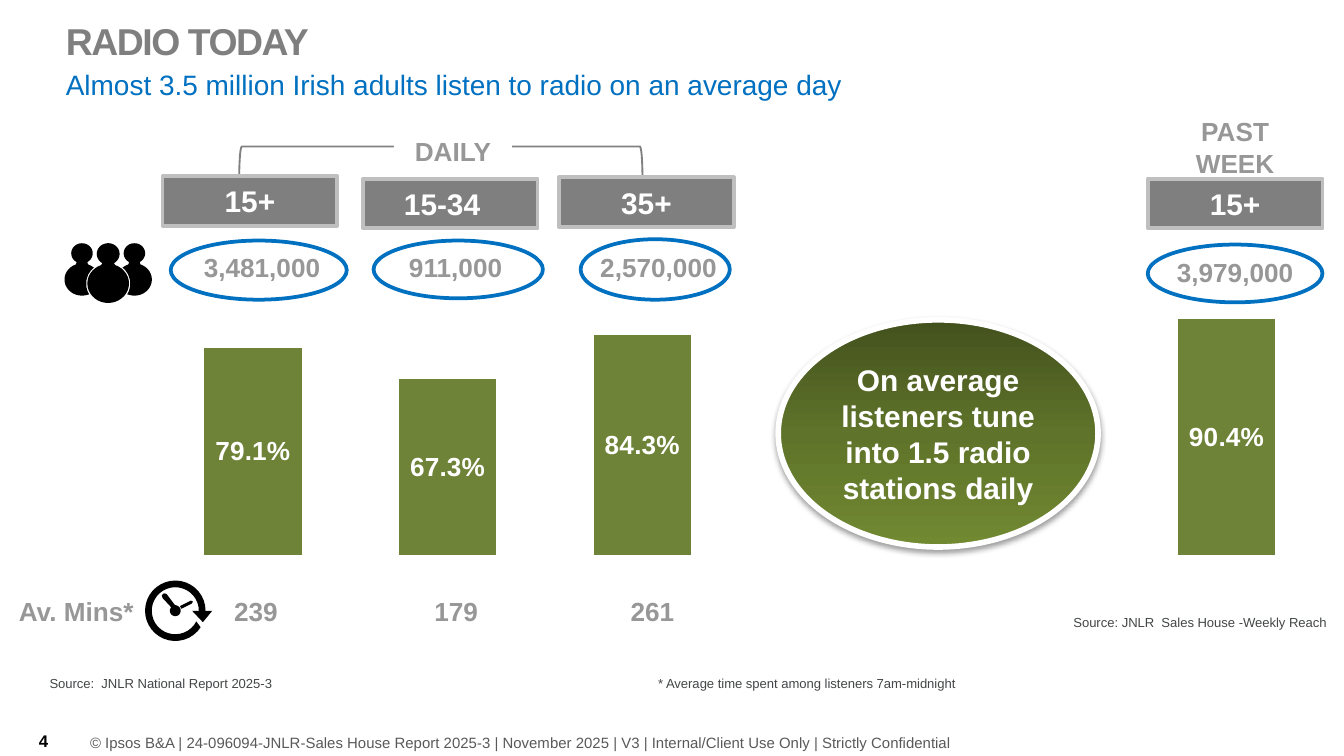
from math import cos, hypot, radians, sin

from pptx import Presentation
from pptx.chart.data import CategoryChartData
from pptx.dml.color import RGBColor
from pptx.enum.chart import XL_CHART_TYPE as Chart, XL_LABEL_POSITION as LabelPos
from pptx.enum.shapes import MSO_SHAPE as Shape
from pptx.enum.text import MSO_ANCHOR as Anchor, PP_ALIGN as Align
from pptx.oxml import parse_xml
from pptx.oxml.ns import nsdecls
from pptx.util import Pt

PX = 9144  # 100 px to the inch
COLORS = {
    "black": "000000", "white": "FFFFFF", "title": "7F7F7F", "blue": "0070C0",
    "grey": "979797", "note": "444647", "footer": "595959", "bracket": "808080",
    "tag_line": "BFBFBF", "bar": "6E8337",
    "dark": "43511D", "middle": "5F732A", "light": "718931",
}
LABEL = {"size": 14, "bold": True, "color": "grey"}
TAG = {"size": 16, "bold": True, "color": "white"}
NOTE = {"size": 7, "color": "note"}
MARGIN = (10, 5, 10, 5)
FLUSH = (0, 0, 0, 0)


def px(value):
    return round(value * PX)


def rgb(name):
    return RGBColor.from_string(COLORS[name])


def set_font(font, size, color, bold=False):
    values = {"name": "Arial", "size": Pt(size), "bold": bold}
    for key, value in values.items():
        setattr(font, key, value)
    font.color.rgb = rgb(color)


def write(shape, text, style, align=Align.LEFT, anchor=Anchor.TOP, insets=FLUSH, wrap=True):
    frame = shape.text_frame
    values = {"word_wrap": wrap, "vertical_anchor": anchor}
    values.update(zip(("margin_left", "margin_top", "margin_right", "margin_bottom"),
                      map(px, insets)))
    for key, value in values.items():
        setattr(frame, key, value)
    para = frame.paragraphs[0]
    para.alignment = align
    span = para.add_run()
    span.text = text
    set_font(span.font, **style)
    return para


def add_text(page, box, text, style, **layout):
    return write(page.shapes.add_textbox(*map(px, box)), text, style, **layout)


def paint(shape, fill=None, line=None, weight=1):
    shape.shadow.inherit = False
    if fill:
        shape.fill.solid()
        shape.fill.fore_color.rgb = rgb(fill)
    else:
        shape.fill.background()
    if line:
        shape.line.color.rgb = rgb(line)
        shape.line.width = Pt(weight)
    else:
        shape.line.fill.background()


def add_shape(page, kind, box, **look):
    shape = page.shapes.add_shape(kind, *map(px, box))
    paint(shape, **look)
    return shape


def arc(x, y, rx, ry, start, end, step=10):
    count = max(1, round(abs(end - start) / step))
    angles = [radians(start + (end - start) * i / count) for i in range(count + 1)]
    return [(x + rx * cos(a), y + ry * sin(a)) for a in angles]


def add_outline(page, box, *contours):
    builder = None
    for contour in contours:
        points = [(px(box[0] + x), px(box[1] + y)) for x, y in contour]
        if builder:
            builder.move_to(*points[0])
        else:
            builder = page.shapes.build_freeform(*points[0], scale=1.0)
        builder.add_line_segments(points[1:], close=True)
    paint(builder.convert_to_shape(), fill="black")


def heading(page, box):
    left, top = box
    para = add_text(page, (left, top, 810, 40), "RADIO TODAY",
                    {"size": 20, "bold": True, "color": "title"},
                    anchor=Anchor.BOTTOM, insets=(18, 5, 18, 5))
    para.line_spacing = 0.9
    para.runs[0].font._element.set("spc", "-80")
    add_text(page, (left + 18, top + 33, 783, 30),
             "Almost 3.5 million Irish adults listen to radio on an average day",
             {"size": 15, "color": "blue"}, insets=(0, 5, 0, 0))


def daily_bracket(page, box):
    left, top, width, height = box
    # The bracket is turned a quarter, so its sides swap about its centre
    turned = (left + (width - height) / 2, top + (height - width) / 2, height, width)
    add_shape(page, Shape.LEFT_BRACKET, turned, line="bracket").rotation = 90
    label = add_shape(page, Shape.RECTANGLE, (left + 115, top - 8, 88, 24), fill="white")
    write(label, "DAILY", LABEL, align=Align.CENTER)


def bar_chart(page, box):
    data = CategoryChartData(number_format="0.0%")
    data.categories = ["1", "2", "3", "4", "5", "6"]
    data.add_series("Series 1", (0.791, 0.673, 0.843, None, None, 0.904))
    chart = page.shapes.add_chart(Chart.COLUMN_CLUSTERED, *map(px, box), data).chart
    chart.has_legend = chart.has_title = False
    set_font(chart.font, 14, "black", True)
    for axis in (chart.category_axis, chart.value_axis):
        axis.visible = axis.has_major_gridlines = False
    scale = chart.value_axis
    scale.minimum_scale, scale.maximum_scale = 0, 1
    plot = chart.plots[0]
    plot.gap_width, plot.overlap, plot.vary_by_categories = 100, -27, False
    bars = plot.series[0]
    bars.format.fill.solid()
    bars.format.fill.fore_color.rgb = rgb("bar")
    labels = bars.data_labels
    values = {"show_value": True, "position": LabelPos.CENTER,
              "number_format": "0.0%", "number_format_is_linked": False}
    for key, value in values.items():
        setattr(labels, key, value)
    set_font(labels.font, 14, "white", True)
    # Fixed inner plot area
    area = chart._chartSpace.chart.plotArea
    for old in area.xpath("c:layout"):
        area.remove(old)
    modes = "".join(f'<c:{k}Mode val="edge"/>' for k in "xy")
    sizes = "".join(f'<c:{k} val="{v}"/>' for k, v in zip("xywh", (0.093, 0.239, 0.9, 0.701)))
    area.insert(0, parse_xml(
        f'<c:layout {nsdecls("c")}><c:manualLayout><c:layoutTarget val="inner"/>'
        f'{modes}{sizes}</c:manualLayout></c:layout>'))


def people_icon(page, box):
    x, y, rx, ry = 32.5, 30, 15.5, 14.5

    def person(center, head_y, head, body):
        return (arc(center, head_y, *head, 60, -240)
                + arc(center, body[0], *body[1:], -110, -430))

    def clear_of_front(point):
        dx, dy = point[0] - x, point[1] - y
        reach = hypot(dx / (rx + 1), dy / (ry + 1))
        return point if reach >= 1 else (x + dx / reach, y + dy / reach)

    for center in (13, 52):
        side = person(center, 7.5, (8, 7.5), (27, 13, 12))
        add_outline(page, box, [clear_of_front(point) for point in side])
    add_outline(page, box, person(x, 8, (8.5, 8), (y, rx, ry)))


def clock_icon(page, box):
    ring = (arc(22.5, 22.5, 22.5, 22.5, 33, 360) + [(50, 22.5), (43, 31), (35, 22.5)]
            + arc(22.5, 22.5, 17.5, 17.5, 360, 27))
    long_hand = [(13, 13), (12.5, 11), (14, 9.5), (16, 10), (22, 18)]
    hub = arc(22.5, 22.5, 4, 4, -70, 220)
    short_hand = [(26, 19), (34, 15), (35.5, 15.5), (35, 17), (27, 21)]
    add_outline(page, box, ring, long_hand + hub, short_hand)


def age_column(page, box, age, listeners, oval, value, minutes=None, shift=0):
    left, top = box
    tag = add_shape(page, Shape.RECTANGLE, (left, top, 130, 37),
                    fill="title", line="tag_line", weight=2)
    write(tag, age, TAG, align=Align.CENTER, anchor=Anchor.MIDDLE,
          insets=(10, 5, 10 + shift, 5))
    x, y, width, height = oval
    add_shape(page, Shape.OVAL, (left + x, top + y, width, height), line="blue", weight=2)
    x, y = value
    add_text(page, (left + x, top + y, 100, 24), listeners, LABEL, align=Align.CENTER)
    if minutes:
        add_text(page, (left + 53, 443, 33, 24), minutes, LABEL,
                 align=Align.CENTER, wrap=False)


def callout(page, box):
    bubble = add_shape(page, Shape.OVAL, box, line="white", weight=3)
    bubble.fill.gradient()
    bubble.fill.gradient_angle = 270
    gradient = bubble._element.spPr.xpath("a:gradFill")[0]
    stops = "".join(f'<a:gs pos="{pos}"><a:srgbClr val="{COLORS[name]}"/></a:gs>'
                    for pos, name in ((0, "dark"), (50000, "middle"), (100000, "light")))
    gradient.replace(gradient.xpath("a:gsLst")[0],
                     parse_xml(f'<a:gsLst {nsdecls("a")}>{stops}</a:gsLst>'))
    bubble._element.spPr.xpath("a:effectLst")[0].append(parse_xml(
        f'<a:outerShdw {nsdecls("a")} blurRad="{Pt(3.1)}" dist="{Pt(1.6)}" dir="5400000" '
        f'rotWithShape="0"><a:srgbClr val="{COLORS["black"]}"><a:alpha val="38000"/>'
        '</a:srgbClr></a:outerShdw>'))
    write(bubble, "On average listeners tune into 1.5 radio stations daily", TAG,
          align=Align.CENTER, anchor=Anchor.MIDDLE, insets=MARGIN)


def footer(page, box):
    left, top = box
    para = add_text(page, (left, top, 732, 30),
                    "Source:  JNLR National Report 2025-3"
                    "\t* Average time spent among listeners 7am-midnight",
                    NOTE, anchor=Anchor.MIDDLE, insets=MARGIN)
    para.line_spacing = 0.9
    props = para._p.get_or_add_pPr()
    props.set("marL", str(px(7)))
    props.set("indent", str(px(-7)))
    # Blank bullet, then right-aligned tab stops
    stops = "".join(f'<a:tab pos="{px(stop)}" algn="r"/>' for stop in (681, 713))
    for part in ('<a:buSzPct {} val="50000"/>', '<a:buChar {} char=" "/>',
                 '<a:tabLst {}>' + stops + '</a:tabLst>'):
        props.append(parse_xml(part.format(nsdecls("a"))))
    add_text(page, (left + 708, top - 37, 259, 12), "Source: JNLR  Sales House -Weekly Reach",
             NOTE, align=Align.RIGHT)
    add_text(page, (left + 9, top + 25, 33, 40), "4",
             {"size": 9, "bold": True, "color": "black"}, anchor=Anchor.BOTTOM)
    add_text(page, (left + 47, top + 52, 661, 13),
             "© Ipsos B&A | 24-096094-JNLR-Sales House Report 2025-3 | November 2025 | V3 | "
             "Internal/Client Use Only | Strictly Confidential",
             {"size": 8, "color": "footer"}, anchor=Anchor.MIDDLE)


def main():
    deck = Presentation()
    deck.slide_width = px(1000)
    deck.slide_height = deck.slide_width * 9 // 16
    page = deck.slides.add_slide(deck.slide_layouts[6])
    heading(page, (31, 12))
    daily_bracket(page, (178, 109, 300, 23))
    bar_chart(page, (26, 152, 966, 278))
    people_icon(page, (48, 181))
    clock_icon(page, (108, 432))
    add_text(page, (14, 443, 90, 24), "Av. Mins*", LABEL)
    # Daily columns, then the weekly one
    age_column(page, (121, 131), "15+", "3,481,000", (6, 48, 131, 44), (24, 56), "239")
    age_column(page, (270, 133), "15-34", "911,000", (8, 46, 126, 43), (19, 54), "179", 12)
    age_column(page, (416, 132), "35+", "2,570,000", (16, 46, 111, 45), (24, 55), "261")
    age_column(page, (854, 133), "15+", "3,979,000", (0, 49, 130, 43), (15, 58))
    add_text(page, (875, 86, 88, 47), "PAST WEEK", LABEL, align=Align.CENTER)
    callout(page, (579, 238, 238, 169))
    footer(page, (20, 494))
    deck.save("out.pptx")


if __name__ == "__main__":
    main()
